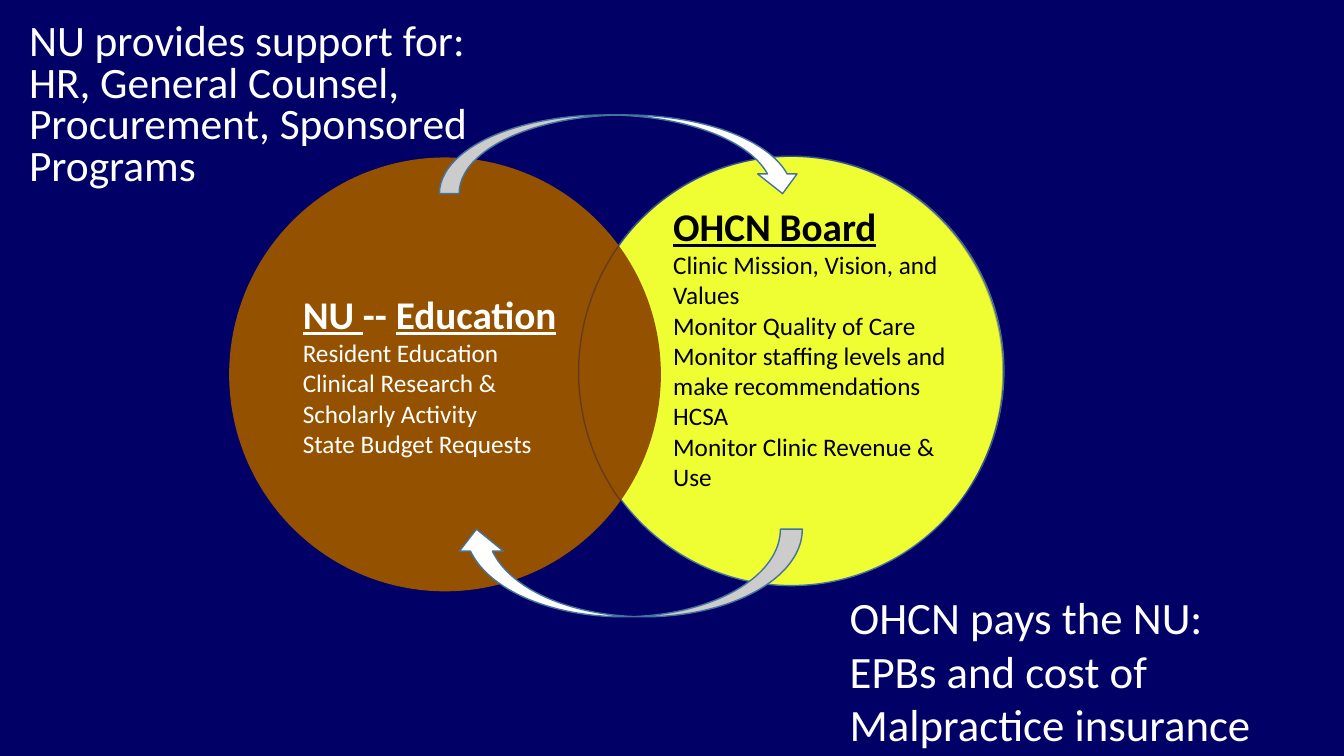
"""Build a slide of two overlapping circles of responsibility linked by curved arrows."""
import pptx
import pptx.dml.color
import pptx.enum.shapes
import pptx.enum.text
import pptx.oxml
import pptx.oxml.ns
import pptx.util

Pt = pptx.util.Pt
SHAPES = pptx.enum.shapes.MSO_SHAPE
ANCHORS = pptx.enum.text.MSO_ANCHOR

NAVY, BROWN, YELLOW, BLUE = "000066", "945200", "EFFD33", "43739E"
WHITE, BLACK = "FFFFFF", "000000"
HEADING = {"size": Pt(28), "bold": True, "underline": True}
PLAIN_HEADING = {"size": Pt(28), "bold": True}
BODY = {"size": Pt(18)}
PAYMENT = {"size": Pt(32)}
SUPPORT = {"size": Pt(31)}

EDUCATION_TEXT = [
    [("NU ", HEADING), ("-- ", PLAIN_HEADING), ("Education", HEADING)],
    [("Resident Education", BODY)],
    [("Clinical Research & Scholarly Activity", BODY)],
    [("State Budget Requests", BODY)],
]
BOARD_TEXT = [
    [("OHCN Board", HEADING)],
    [("Clinic Mission, Vision, and Values", BODY)],
    [("Monitor Quality of Care", BODY)],
    [("Monitor staffing levels and make recommendations", BODY)],
    [("HCSA", BODY)],
    [("Monitor Clinic Revenue & Use", BODY)],
]
PAYMENT_TEXT = [
    [("OHCN pays the NU:", PAYMENT)],
    [("EPBs and cost of", PAYMENT)],
    [("Malpractice insurance", PAYMENT)],
]
SUPPORT_TEXT = [
    [("NU provides support for:", SUPPORT)],
    [("HR, General Counsel, Procurement, Sponsored Programs", SUPPORT)],
]

BOARD_CIRCLE = (413.3, 111.6, 303.8, 306.7)
EDUCATION_CIRCLE = (164.2, 113, 307.4, 308.9)
BOARD_OUTLINE = (413.3, 111.6, 303.1, 308.2)
BOARD_BOX = (473.8, 141.1, 225.4, 216)
PAYMENT_ARROW = (324.7, 378, 248.4, 62.6)
SUPPORT_ARROW = (313.9, 82.1, 259.2, 56.2)
PAYMENT_BOX = (599.8, 417.6, 311, 112.3)
SUPPORT_BOX = (13.7, 13, 342, 134.6)


def color(hex_code):
    return pptx.dml.color.RGBColor.from_string(hex_code)


def write_text(shape, paragraphs, text_color, anchor=ANCHORS.TOP, spacing=None):
    frame = shape.text_frame
    frame.word_wrap = True
    frame.vertical_anchor = anchor
    for index, runs in enumerate(paragraphs):
        paragraph = frame.add_paragraph() if index else frame.paragraphs[0]
        paragraph.alignment = pptx.enum.text.PP_ALIGN.LEFT
        paragraph.line_spacing = spacing
        for text, formats in runs:
            run = paragraph.add_run()
            run.text = text
            run.font.color.rgb = color(text_color)
            for name, value in {"name": "Calibri", **formats}.items():
                setattr(run.font, name, value)


def add_figure(slide, kind, box, fill, line):
    shape = slide.shapes.add_shape(kind, *map(Pt, box))
    shape.shadow.inherit = False
    if fill:
        shape.fill.solid()
        shape.fill.fore_color.rgb = color(fill)
    else:
        shape.fill.background()
    shape.line.color.rgb = color(line)
    shape.line.width = Pt(1)
    return shape


def add_label(slide, box, paragraphs, text_color, spacing=None):
    label = slide.shapes.add_textbox(*map(Pt, box))
    write_text(label, paragraphs, text_color, spacing=spacing)


def main():
    presentation = pptx.Presentation()
    presentation.slide_width, presentation.slide_height = Pt(960), Pt(540)
    slide = presentation.slides.add_slide(presentation.slide_layouts[6])
    slide.background.fill.solid()
    slide.background.fill.fore_color.rgb = color(NAVY)

    add_figure(slide, SHAPES.OVAL, BOARD_CIRCLE, YELLOW, BLUE)
    education = add_figure(slide, SHAPES.OVAL, EDUCATION_CIRCLE, BROWN, BROWN)
    write_text(education, EDUCATION_TEXT, WHITE, ANCHORS.MIDDLE)
    add_label(slide, BOARD_BOX, BOARD_TEXT, BLACK)

    outline = add_figure(slide, SHAPES.OVAL, BOARD_OUTLINE, None, NAVY)
    line_color = outline.element.find(
        ".//" + pptx.oxml.ns.qn("a:ln") + "//" + pptx.oxml.ns.qn("a:srgbClr"))
    line_color.append(pptx.oxml.parse_xml(
        f'<a:alpha {pptx.oxml.ns.nsdecls("a")} val="29000"/>'))

    payment = add_figure(slide, SHAPES.CURVED_UP_ARROW, PAYMENT_ARROW, WHITE, BLUE)
    payment.element.find(".//" + pptx.oxml.ns.qn("a:xfrm")).set("flipH", "1")
    add_label(slide, PAYMENT_BOX, PAYMENT_TEXT, WHITE)
    add_figure(slide, SHAPES.CURVED_DOWN_ARROW, SUPPORT_ARROW, WHITE, BLUE)
    add_label(slide, SUPPORT_BOX, SUPPORT_TEXT, WHITE, spacing=0.8)
    presentation.save("out.pptx")


if __name__ == "__main__":
    main()
